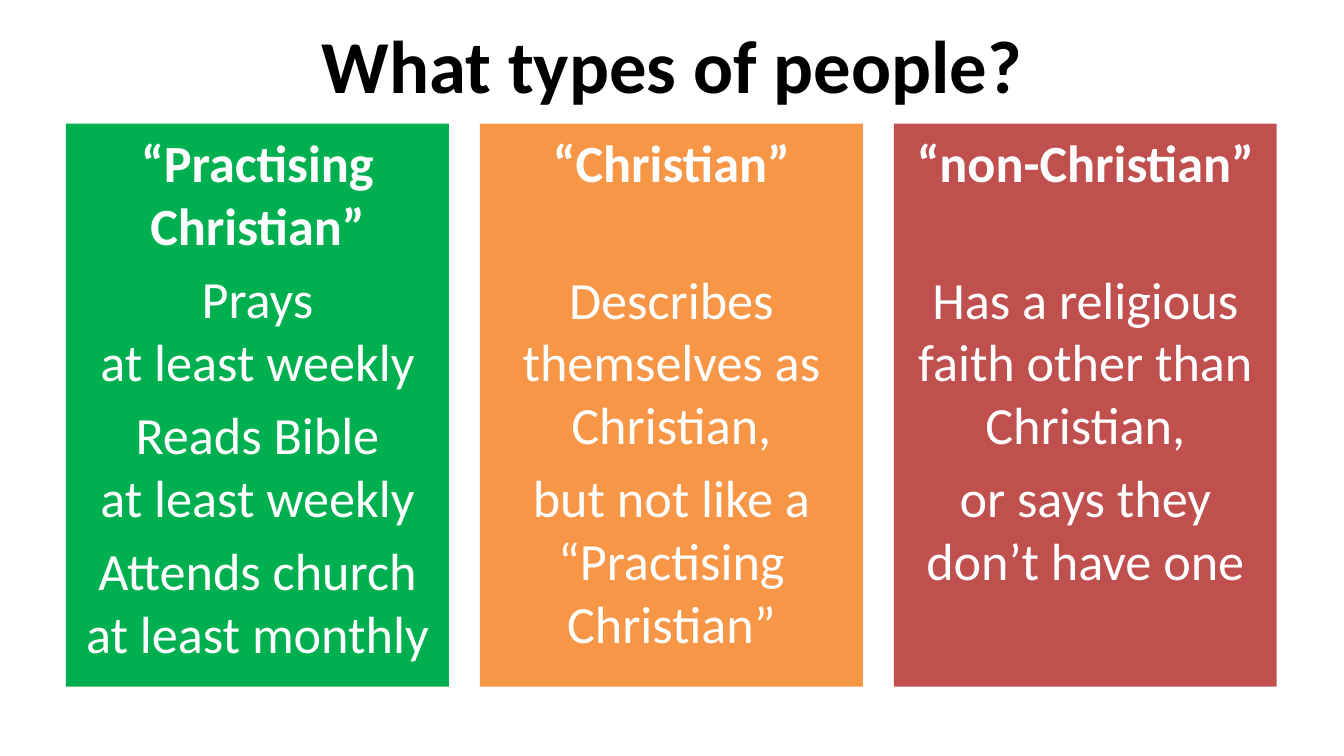
from dataclasses import dataclass

from pptx import Presentation
from pptx.dml.color import RGBColor
from pptx.enum.shapes import MSO_SHAPE
from pptx.enum.text import MSO_ANCHOR, PP_ALIGN
from pptx.util import Inches, Pt


@dataclass(frozen=True)
class Theme:
    font: str = "Calibri"
    title_size: float = 40
    body_size: float = 28
    paragraph_gap: float = 5.6
    heading_line: float = 34
    ink: str = "000000"
    light: str = "FFFFFF"
    green: str = "00B050"
    orange: str = "F79646"
    red: str = "C0504D"


THEME = Theme()

# Fill, heading, lines the heading takes, statements
GROUPS = [
    (THEME.green, "“Practising Christian”", 2,
     ["Prays\nat least weekly", "Reads Bible\nat least weekly",
      "Attends church\nat least monthly"]),
    (THEME.orange, "“Christian”", 1,
     ["Describes themselves as Christian,",
      "but not like a “Practising Christian”"]),
    (THEME.red, "“non-Christian”", 1,
     ["Has a religious faith other than Christian,",
      "or says they don’t have one"]),
]
HEADING_LINES = max(lines for _, _, lines, _ in GROUPS)


def format_paragraph(paragraph, size, color, bold):
    paragraph.alignment = PP_ALIGN.CENTER
    for run in paragraph.runs:
        run.font.name = THEME.font
        run.font.size = Pt(size)
        run.font.bold = bold
        run.font.color.rgb = RGBColor.from_string(color)


def place_title(slide, text, left, top, width, height):
    title = slide.shapes.title
    title.left, title.top = Inches(left), Inches(top)
    title.width, title.height = Inches(width), Inches(height)
    title.text_frame.text = text
    title.text_frame.vertical_anchor = MSO_ANCHOR.MIDDLE
    format_paragraph(title.text_frame.paragraphs[0], THEME.title_size, THEME.ink, True)


def add_group_panel(slide, group, left, top, width, height):
    fill, heading, heading_lines, statements = group
    panel = slide.shapes.add_shape(
        MSO_SHAPE.RECTANGLE, Inches(left), Inches(top), Inches(width), Inches(height))
    panel.shadow.inherit = False
    panel.fill.solid()
    panel.fill.fore_color.rgb = RGBColor.from_string(fill)
    panel.line.fill.background()

    frame = panel.text_frame
    frame.word_wrap = True
    frame.vertical_anchor = MSO_ANCHOR.TOP
    frame.text = heading
    label = frame.paragraphs[0]
    format_paragraph(label, THEME.body_size, THEME.light, True)
    # Shorter headings leave room so that all statements start level
    label.space_after = Pt((HEADING_LINES - heading_lines) * THEME.heading_line)
    for statement in statements:
        paragraph = frame.add_paragraph()
        paragraph.text = statement
        paragraph.space_before = Pt(THEME.paragraph_gap)
        format_paragraph(paragraph, THEME.body_size, THEME.light, False)


def add_group_panels(slide, left, top, width, height, gap):
    panel_width = (width - gap * (len(GROUPS) - 1)) / len(GROUPS)
    for index, group in enumerate(GROUPS):
        add_group_panel(slide, group, left + index * (panel_width + gap), top,
                        panel_width, height)


def main():
    presentation = Presentation()
    presentation.slide_width = Inches(10)
    presentation.slide_height = presentation.slide_width * 9 // 16
    slide = presentation.slides.add_slide(
        presentation.slide_layouts.get_by_name("Title Only"))
    place_title(slide, "What types of people?", 0.5, 0, 9, 0.94)
    add_group_panels(slide, 0.49, 0.92, 9.01, 4.19, 0.23)
    presentation.save("out.pptx")


if __name__ == "__main__":
    main()
